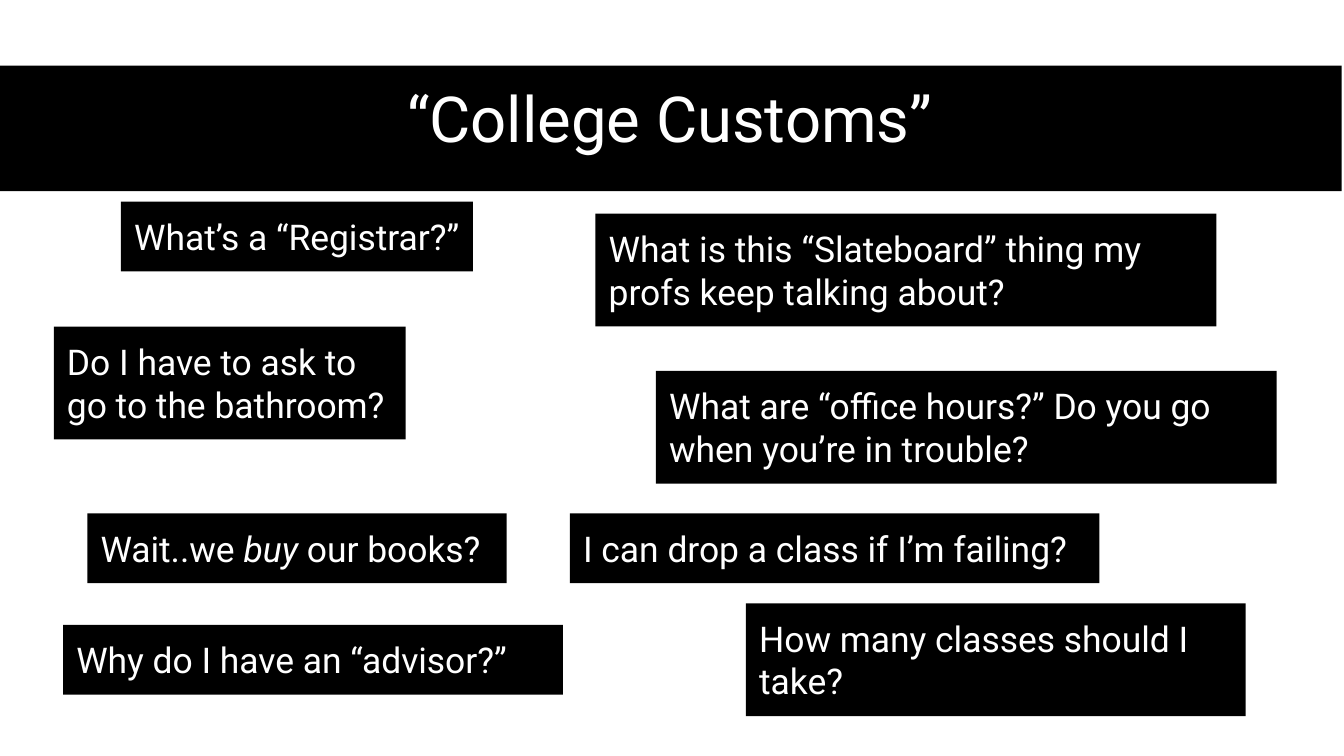
from pptx import Presentation
from pptx.dml.color import RGBColor
from pptx.enum.shapes import MSO_SHAPE
from pptx.enum.text import MSO_ANCHOR, MSO_AUTO_SIZE, PP_ALIGN
from pptx.util import Pt

RECT = MSO_SHAPE.RECTANGLE
TOP = MSO_ANCHOR.TOP
GROW = MSO_AUTO_SIZE.SHAPE_TO_FIT_TEXT
LEFT, MID = PP_ALIGN.LEFT, PP_ALIGN.CENTER

TITLE = "“College Customs”"
ASKS = [
    (28.8, 175, 188.6, 2, ["Do I have to ask to go to the bathroom?"]),
    (64.8, 108, 188.6, 1, ["What’s a “Registrar?”"]),
    (46.8, 275, 224.6, 1, ["Wait..we ", "buy", " our books?"]),
    (319, 114.5, 332.6, 2,
     ["What is this “Slateboard” thing my profs keep talking about?"]),
    (351.4, 198.7, 332.6, 2,
     ["What are “office hours?” Do you go when you’re in trouble?"]),
    (305.3, 275, 283.7, 1, ["I can drop a class if I’m failing?"]),
    (399.6, 323.3, 267.8, 2, ["How many classes should I take?"]),
    (33.8, 334.8, 267.8, 1, ["Why do I have an “advisor?”"]),
]

HEX = {"box": "000000", "text": "FFFFFF"}
WIDE, HIGH = 720, 405
PAD, ROW = 7.2, 23
FRAME = {
    "margin_left": Pt(PAD), "margin_right": Pt(PAD),
    "margin_top": Pt(PAD), "margin_bottom": Pt(PAD),
    "word_wrap": True, "auto_size": GROW, "vertical_anchor": TOP,
}


def style(obj, vals):
    for key, val in vals.items():
        setattr(obj, key, val)


def fill_box(box, spot, runs, size, align):
    x, y, w, h = spot
    style(box, {"left": Pt(x), "top": Pt(y), "width": Pt(w), "height": Pt(h)})
    box.fill.solid()
    box.fill.fore_color.rgb = RGBColor.from_string(HEX["box"])
    box.line.fill.background()
    style(box.text_frame, FRAME)
    para = box.text_frame.paragraphs[0]
    para.alignment = align
    for i, text in enumerate(runs):
        run = para.add_run()
        run.text = text
        style(run.font, {"name": "Roboto", "size": Pt(size), "italic": i == 1})
        run.font.color.rgb = RGBColor.from_string(HEX["text"])


deck = Presentation()
style(deck, {"slide_width": Pt(WIDE), "slide_height": Pt(HIGH)})
slide = deck.slides.add_slide(deck.slide_layouts[5])

fill_box(slide.shapes.title, (-1.2, 35.2, WIDE, 55.4), [TITLE], 34, MID)
for x, y, w, rows, runs in ASKS:
    spot = (x, y, w, rows * ROW + 2 * PAD)
    box = slide.shapes.add_shape(RECT, *map(Pt, spot))
    box.shadow.inherit = False
    fill_box(box, spot, runs, 19, LEFT)

deck.save("out.pptx")
